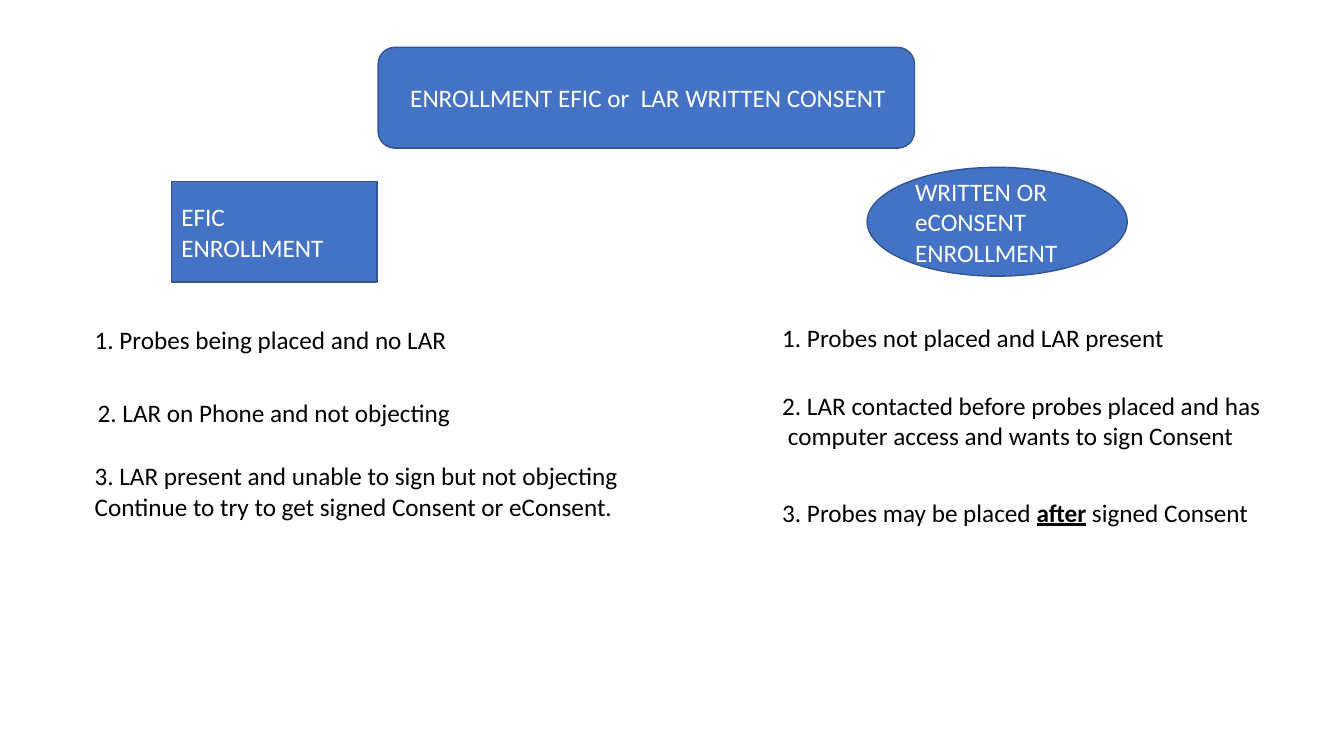
import pptx
import pptx.dml.color
import pptx.enum.shapes
import pptx.enum.text
import pptx.util

Inches = pptx.util.Inches
Shape = pptx.enum.shapes.MSO_SHAPE

# Content
COLORS = {"fill": "4472C4", "outline": "325491", "light": "FFFFFF", "dark": "000000"}

# preset, text, (left, top, width, height), left text margin
HEADINGS = [
    (Shape.RECTANGLE, "EFIC ENROLLMENT", (1.7, 1.8, 2.04, 1), 0.1),
    (Shape.OVAL, "WRITTEN OR eCONSENT ENROLLMENT", (8.6, 1.66, 2.58, 1.08), 0.1),
    (Shape.ROUNDED_RECTANGLE, "ENROLLMENT EFIC or  LAR WRITTEN CONSENT", (3.75, 0.47, 5.32, 1), 0.27),
]

# left, top, width, lines; each line is a list of runs (text, emphasized)
EFIC_STEPS = [
    (0.84, 3.17, 3.78, [[("1. Probes being placed and no LAR", False)]]),
    (0.87, 3.89, 3.74, [[("2. LAR on Phone and not objecting", False)]]),
    (0.84, 4.52, 5.46, [[("3. LAR present and unable to sign but not objecting", False)],
                        [("Continue to try to get signed Consent or eConsent.", False)]]),
]
CONSENT_STEPS = [
    (7.66, 3.15, 4.03, [[("1. Probes not placed and LAR present", False)]]),
    (7.66, 3.82, 5, [[("2. LAR contacted before probes placed and has", False)],
                     [(" computer access and wants to sign Consent", False)]]),
    (7.66, 4.88, 4.87, [[("3. Probes may be placed ", False), ("after", True),
                         (" signed Consent", False)]]),
]
FIRST_LINE_HEIGHT, EXTRA_LINE_HEIGHT = 0.4, 0.31


def rgb(name):
    return pptx.dml.color.RGBColor.from_string(COLORS[name])


def add_run(paragraph, text, color, emphasized=False):
    run = paragraph.add_run()
    run.text = text
    run.font.name = "Calibri"
    run.font.size = pptx.util.Pt(18)
    run.font.color.rgb = rgb(color)
    if emphasized:
        run.font.bold = run.font.underline = True


def add_heading(slide, preset, text, box, margin):
    heading = slide.shapes.add_shape(preset, *map(Inches, box))
    heading.shadow.inherit = False
    heading.fill.solid()
    heading.fill.fore_color.rgb = rgb("fill")
    heading.line.color.rgb = rgb("outline")
    heading.line.width = pptx.util.Pt(1)
    frame = heading.text_frame
    frame.word_wrap = True
    frame.margin_left = Inches(margin)
    frame.vertical_anchor = pptx.enum.text.MSO_ANCHOR.MIDDLE
    frame.paragraphs[0].alignment = pptx.enum.text.PP_ALIGN.LEFT
    add_run(frame.paragraphs[0], text, "light")


def add_step(slide, left, top, width, lines):
    height = FIRST_LINE_HEIGHT + EXTRA_LINE_HEIGHT * (len(lines) - 1)
    step = slide.shapes.add_textbox(*map(Inches, (left, top, width, height)))
    frame = step.text_frame
    frame.word_wrap = False
    frame.auto_size = pptx.enum.text.MSO_AUTO_SIZE.SHAPE_TO_FIT_TEXT
    for number, line in enumerate(lines):
        paragraph = frame.add_paragraph() if number else frame.paragraphs[0]
        for text, emphasized in line:
            add_run(paragraph, text, "dark", emphasized)


def main():
    deck = pptx.Presentation()
    deck.slide_width, deck.slide_height = Inches(13.33), Inches(7.5)
    slide = deck.slides.add_slide(deck.slide_layouts[6])

    # Steps below each heading
    for step in EFIC_STEPS + CONSENT_STEPS:
        add_step(slide, *step)

    # Title and the two enrollment headings
    for heading in HEADINGS:
        add_heading(slide, *heading)

    deck.save("out.pptx")


if __name__ == "__main__":
    main()
